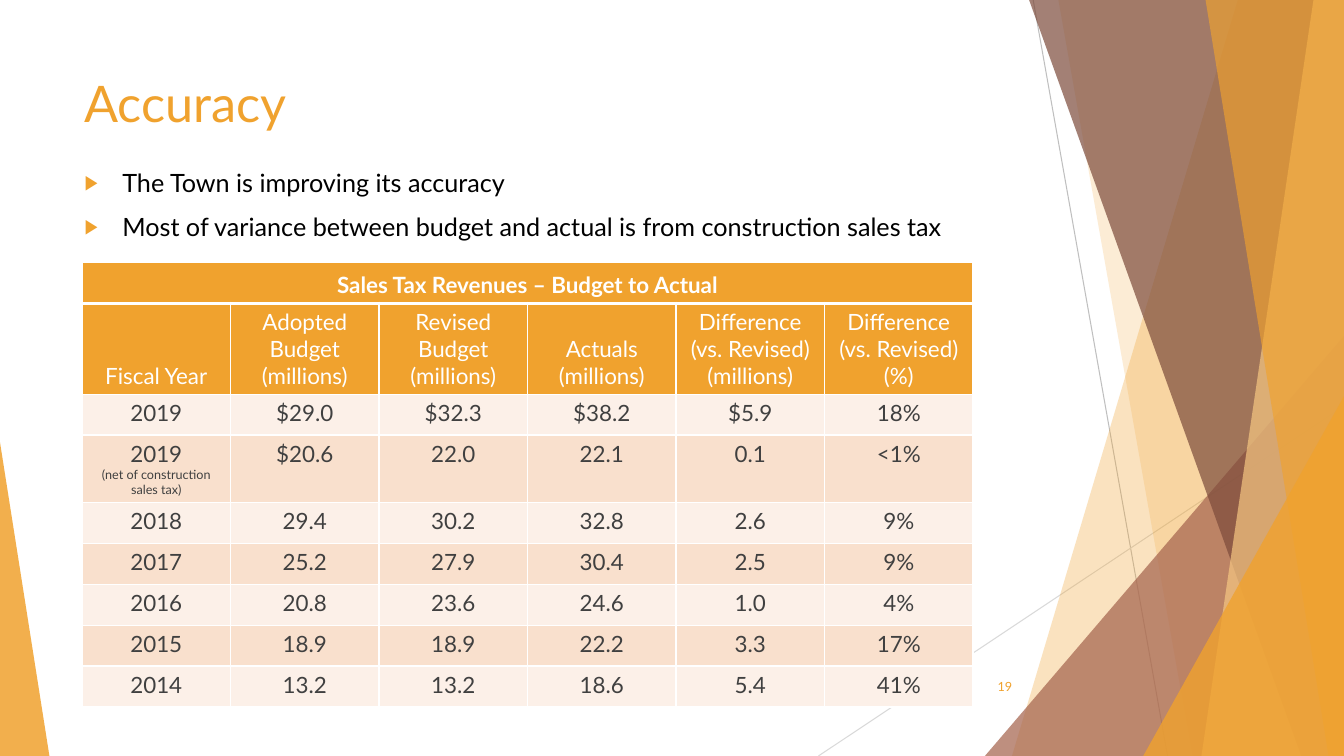
"""Build the budget accuracy slide with its sales tax table."""
import pptx
import pptx.dml.color
import pptx.enum.shapes
import pptx.enum.text
import pptx.oxml
import pptx.oxml.ns
import pptx.util

Pt = pptx.util.Pt
RGBColor = pptx.dml.color.RGBColor
qn = pptx.oxml.ns.qn
Align = pptx.enum.text.PP_ALIGN
Anchor = pptx.enum.text.MSO_ANCHOR

WIDTH, HEIGHT = 960, 540
FONT = "Lato"
ORANGE = RGBColor(0xF0, 0xA2, 0x2E)
PALE_ORANGE = RGBColor(0xF6, 0xC7, 0x82)
RUST = RGBColor(0xA5, 0x64, 0x4E)
BROWN = RGBColor(0x7C, 0x4B, 0x3B)
GREY = RGBColor(0xBF, 0xBF, 0xBF)
LIGHT_GREY = RGBColor(0xD9, 0xD9, 0xD9)
WHITE = RGBColor(0xFF, 0xFF, 0xFF)
BLACK = RGBColor(0, 0, 0)
DARK = RGBColor(0x40, 0x40, 0x40)
BANDS = (RGBColor(0xFC, 0xF0, 0xE8), RGBColor(0xF9, 0xE0, 0xCD))

BULLETS = (
    "The Town is improving its accuracy",
    "Most of variance between budget and actual is from construction sales tax",
)
TABLE_TITLE = "Sales Tax Revenues – Budget to Actual"
HEADINGS = (
    "Fiscal Year",
    "Adopted Budget\n(millions)",
    "Revised Budget\n(millions)",
    "Actuals\n(millions)",
    "Difference (vs. Revised)\n(millions)",
    "Difference (vs. Revised)\n(%)",
)
REVENUES = (
    ("2019", "$29.0", "$32.3", "$38.2", "$5.9", "18%"),
    ("2019\n(net of construction\nsales tax)", "$20.6", "22.0", "22.1", "0.1", "<1%"),
    ("2018", "29.4", "30.2", "32.8", "2.6", "9%"),
    ("2017", "25.2", "27.9", "30.4", "2.5", "9%"),
    ("2016", "20.8", "23.6", "24.6", "1.0", "4%"),
    ("2015", "18.9", "18.9", "22.2", "3.3", "17%"),
    ("2014", "13.2", "13.2", "18.6", "5.4", "41%"),
)
ROW_HEIGHT, HEADING_HEIGHT, NOTE_HEIGHT = 29.25, 64, 48


def style_runs(paragraph, size, color, bold=False):
    """Format every run of a paragraph."""
    for run in paragraph.runs:
        run.font.name = FONT
        run.font.size = Pt(size)
        run.font.bold = bold
        run.font.color.rgb = color


def paint(shape, color, opacity):
    """Give a shape a translucent fill without outline or shadow."""
    shape.shadow.inherit = False
    shape.fill.solid()
    shape.fill.fore_color.rgb = color
    shape.line.fill.background()
    color_element = shape._element.spPr.find(".//" + qn("a:srgbClr"))
    alpha = pptx.oxml.parse_xml(f'<a:alpha {pptx.oxml.ns.nsdecls("a")} val="{opacity * 1000}"/>')
    color_element.append(alpha)


def add_line(slide, start, end, color):
    """Draw a thin straight line."""
    kind = pptx.enum.shapes.MSO_CONNECTOR.STRAIGHT
    connector = slide.shapes.add_connector(kind, *map(Pt, start + end))
    connector.line.color.rgb = color
    connector.line.width = Pt(0.75)
    effects = pptx.oxml.parse_xml(f'<a:effectLst {pptx.oxml.ns.nsdecls("a")}/>')
    connector._element.spPr.append(effects)


def add_shard(slide, top_left, bottom_left, color, opacity):
    """Draw a full-height panel with a slanted left edge, ending at the right border."""
    builder = slide.shapes.build_freeform(Pt(top_left), 0)
    corners = ((WIDTH, 0), (WIDTH, HEIGHT), (bottom_left, HEIGHT))
    builder.add_line_segments([(Pt(x), Pt(y)) for x, y in corners])
    paint(builder.convert_to_shape(), color, opacity)


def add_wedge(slide, left, width, height, apex, color, opacity):
    """Draw a triangle standing on the bottom border."""
    kind = pptx.enum.shapes.MSO_SHAPE.ISOSCELES_TRIANGLE
    wedge = slide.shapes.add_shape(kind, Pt(left), Pt(HEIGHT - height), Pt(width), Pt(height))
    wedge.adjustments[0] = apex
    paint(wedge, color, opacity)


def add_backdrop(slide):
    """Draw the overlapping shards along the borders."""
    add_line(slide, (738, 0), (834, HEIGHT), GREY)
    add_line(slide, (WIDTH, 290), (584.6, HEIGHT), LIGHT_GREY)
    add_shard(slide, 884.2, 722.9, ORANGE, 30)
    add_shard(slide, 756, 851.8, ORANGE, 20)
    add_wedge(slide, 703.5, 256.5, 300, 1, RUST, 72)
    add_shard(slide, 735.1, 929.5, BROWN, 70)
    add_shard(slide, 938.2, 858.2, PALE_ORANGE, 70)
    add_shard(slide, 861.1, 949, ORANGE, 65)
    add_wedge(slide, 816.6, 143.4, 257, 1, ORANGE, 80)
    add_wedge(slide, 0, 35.3, 224, 0, ORANGE, 85)


def add_text(slide, box, lines, size, color, align=Align.LEFT, anchor=Anchor.TOP):
    """Place a wrapped text box and return its paragraphs."""
    frame = slide.shapes.add_textbox(*map(Pt, box)).text_frame
    frame.word_wrap = True
    frame.vertical_anchor = anchor
    frame.text = "\n".join(lines)
    for paragraph in frame.paragraphs:
        paragraph.alignment = align
        style_runs(paragraph, size, color)
    return frame.paragraphs


def add_bullets(slide, box):
    """Place the bulleted statements."""
    for paragraph in add_text(slide, box, BULLETS, 18, BLACK):
        paragraph.space_before = Pt(10)
        properties = paragraph._p.get_or_add_pPr()
        properties.set("marL", str(Pt(27)))
        properties.set("indent", str(Pt(-27)))
        for markup in (
            f'<a:buClr {{}}><a:srgbClr val="{ORANGE}"/></a:buClr>',
            '<a:buSzPct {} val="80000"/>',
            '<a:buFont {} typeface="Arial"/>',
            '<a:buChar {} char="▶"/>',
        ):
            properties.append(pptx.oxml.parse_xml(markup.format(pptx.oxml.ns.nsdecls("a"))))


def style_cell(cell, text, fill, color, anchor, bold=False, bottom_border=1):
    """Fill, border and write one table cell; further lines of a body cell are small."""
    properties = cell._tc.get_or_add_tcPr()
    for side, weight in zip("LRTB", (1, 1, 1, bottom_border)):
        properties.append(pptx.oxml.parse_xml(
            f'<a:ln{side} {pptx.oxml.ns.nsdecls("a")} w="{Pt(weight)}">'
            f'<a:solidFill><a:srgbClr val="{WHITE}"/></a:solidFill></a:ln{side}>'))
    cell.fill.solid()
    cell.fill.fore_color.rgb = fill
    cell.vertical_anchor = anchor
    cell.text_frame.text = text
    for index, paragraph in enumerate(cell.text_frame.paragraphs):
        paragraph.alignment = Align.CENTER
        size = 9 if index and anchor == Anchor.TOP else 16
        style_runs(paragraph, size, color, bold)


def add_revenue_table(slide, left, top, width):
    """Place the table comparing budget with actual revenue."""
    heights = [ROW_HEIGHT, HEADING_HEIGHT]
    heights += [NOTE_HEIGHT if "\n" in row[0] else ROW_HEIGHT for row in REVENUES]
    table = slide.shapes.add_table(
        len(heights), len(HEADINGS), Pt(left), Pt(top), Pt(width), Pt(sum(heights))).table
    for row, height in zip(table.rows, heights):
        row.height = Pt(height)
    for column in table.columns:
        column.width = Pt(width / len(HEADINGS))
    table.cell(0, 0).merge(table.cell(0, len(HEADINGS) - 1))
    style_cell(table.cell(0, 0), TABLE_TITLE, ORANGE, WHITE, Anchor.BOTTOM, True, 3)
    for column, heading in enumerate(HEADINGS):
        style_cell(table.cell(1, column), heading, ORANGE, WHITE, Anchor.BOTTOM)
    for row, values in enumerate(REVENUES):
        for column, value in enumerate(values):
            style_cell(table.cell(row + 2, column), value, BANDS[row % 2], DARK, Anchor.TOP)


def main():
    """Assemble and save the slide."""
    presentation = pptx.Presentation()
    presentation.slide_width, presentation.slide_height = Pt(WIDTH), Pt(HEIGHT)
    slide = presentation.slides.add_slide(presentation.slide_layouts[6])
    add_backdrop(slide)
    add_text(slide, (53.3, 48, 677, 104), ["Accuracy"], 36, ORANGE)
    add_bullets(slide, (53.3, 116, 677, 305))
    add_revenue_table(slide, 58.6, 187.5, 636.6)
    add_text(slide, (676, 476, 54, 29), ["19"], 9, ORANGE, Align.RIGHT, Anchor.MIDDLE)
    presentation.save("out.pptx")


if __name__ == "__main__":
    main()
